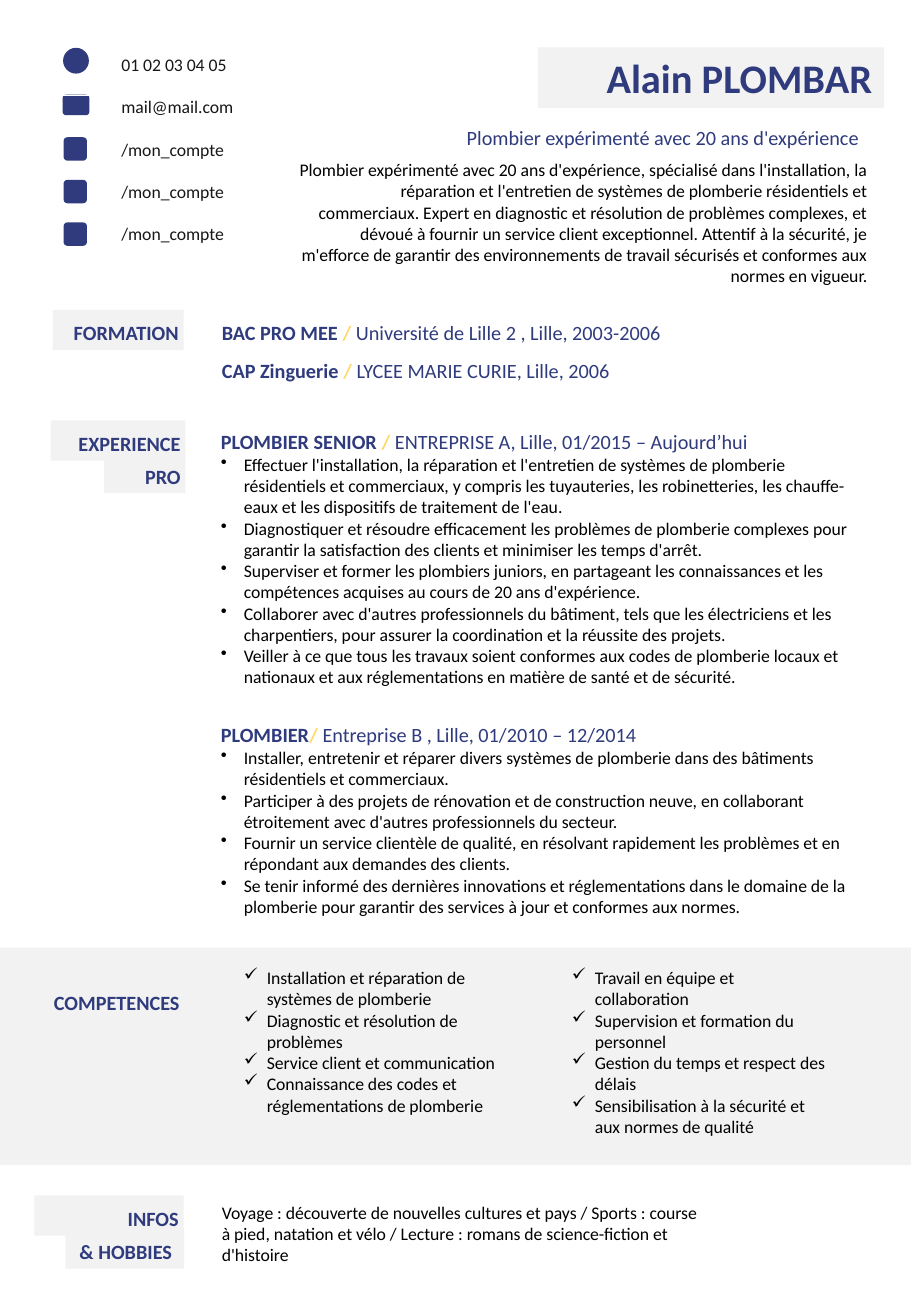
from dataclasses import dataclass

from lxml.etree import SubElement as SubEl
from pptx import Presentation as Deck
from pptx.dml.color import RGBColor as RGB
from pptx.enum.shapes import MSO_SHAPE as Kind
from pptx.enum.text import MSO_ANCHOR as Anchor, PP_ALIGN as Align
from pptx.oxml.ns import qn
from pptx.util import Cm, Pt


@dataclass(frozen=True)
class Theme:
    font: str = "Calibri"
    navy: str = "2F3B7D"
    gold: str = "FFD966"
    grey: str = "F2F2F2"
    white: str = "FFFFFF"
    black: str = "000000"
    ink: str = "181717"
    name: float = 24
    head: float = 12
    body: float = 10.5


def write(par, text, size, color, bold=False, font="Calibri"):
    run = par.add_run()
    run.text = text
    run.font.name = font
    run.font.size = Pt(size)
    run.font.bold = bold
    run.font.color.rgb = RGB.from_string(color)


class Page:
    def __init__(self, slide, theme):
        self.shapes = slide.shapes
        self.look = theme

    def paint(self, shape, color):
        shape.shadow.inherit = False
        shape.fill.solid()
        shape.fill.fore_color.rgb = RGB.from_string(color)
        shape.line.fill.background()

    def block(self, spot, color, kind=Kind.RECTANGLE):
        shape = self.shapes.add_shape(kind, *map(Cm, spot))
        self.paint(shape, color)
        return shape

    def fill(self, frame, rows, align=Align.LEFT, space=1, after=0, mark=None):
        frame.word_wrap = True
        frame.vertical_anchor = Anchor.TOP
        for at, row in enumerate(rows):
            par = frame.add_paragraph() if at else frame.paragraphs[0]
            self.line(par, row, align, space, after, mark)

    def line(self, par, row, align=Align.LEFT, space=1, after=0, mark=None):
        par.alignment = align
        par.line_spacing = space
        par.space_after = Pt(after)
        if mark:
            props = par._p.get_or_add_pPr()
            props.set("marL", str(Cm(0.48)))
            props.set("indent", str(Cm(-0.48)))
            SubEl(props, qn("a:buChar")).set("char", mark)
        for text, style in row:
            write(par, text, font=self.look.font, **style)

    def plain(self, text, size=None, color=None, bold=False):
        size = size or self.look.body
        color = color or self.look.black
        return [(text, dict(size=size, color=color, bold=bold))]

    def text(self, spot, rows, **form):
        box = self.shapes.add_textbox(*map(Cm, spot))
        self.fill(box.text_frame, rows, **form)
        return box.text_frame

    def label(self, spot, text, side=0.1, wrap=True):
        frame = self.block(spot, self.look.grey).text_frame
        frame.margin_left = frame.margin_right = Cm(side)
        row = self.plain(text, self.look.head, self.look.navy, True)
        self.fill(frame, [row], align=Align.RIGHT, space=1.2)
        frame.word_wrap = wrap

    def post(self, spot, title, place, tasks=(), align=Align.LEFT):
        look = self.look
        row = (self.plain(title, look.head, look.navy, True)
               + self.plain("/ ", look.head, look.gold, True)
               + self.plain(place, look.head, look.navy))
        frame = self.text(spot, [row], align=align, space=1.2)
        for task in tasks:
            self.line(frame.add_paragraph(), self.plain(task), mark="•")

    def draw(self, *strokes, close):
        first = strokes[0][0]
        pen = self.shapes.build_freeform(*first, scale=Cm(1))
        for stroke in strokes:
            if stroke[0] != first:
                pen.move_to(*stroke[0])
            pen.add_line_segments(stroke[1:], close=close)
        shape = pen.convert_to_shape()
        self.paint(shape, self.look.white)
        return shape

    def phone(self):
        self.block((1.32, 1, 0.54, 0.54), self.look.navy, Kind.OVAL)
        self.draw([(1.7, 1.42), (1.63, 1.42), (1.5, 1.35), (1.42, 1.17),
                   (1.47, 1.12), (1.5, 1.12), (1.53, 1.19), (1.51, 1.22),
                   (1.56, 1.3), (1.63, 1.35), (1.66, 1.31), (1.73, 1.35),
                   (1.73, 1.4)], close=True)

    def mail(self):
        self.block((1.31, 1.98, 0.56, 0.43), self.look.navy,
                   Kind.ROUNDED_RECTANGLE)
        folds = self.draw([(1.31, 2), (1.59, 2.24), (1.87, 2)],
                          [(1.31, 2.39), (1.51, 2.17)],
                          [(1.87, 2.39), (1.67, 2.17)], close=False)
        folds.fill.background()
        folds.line.color.rgb = RGB.from_string(self.look.white)
        folds.line.width = Pt(0.75)


def main():
    deck = Deck()
    deck.slide_width, deck.slide_height = Cm(19.05), Cm(27.51)
    look = Theme()
    page = Page(deck.slides.add_slide(deck.slide_layouts[6]), look)
    plain = page.plain

    page.block((0, 19.81, 19.05, 4.55), look.grey)

    name = page.block((11.25, 0.99, 7.24, 1.27), look.grey)
    page.fill(name.text_frame, [plain("Alain PLOMBAR", look.name, look.navy, True)],
              align=Align.RIGHT)
    page.text((7.42, 2.39, 10.8, 0.84),
              [plain("Plombier expérimenté avec 20 ans d'expérience", look.head, look.navy)],
              align=Align.RIGHT, space=1.2)
    page.text((5.94, 3.2, 12.45, 2.95), [plain(
        "Plombier expérimenté avec 20 ans d'expérience, spécialisé dans l'installation, la "
        "réparation et l'entretien de systèmes de plomberie résidentiels et commerciaux. "
        "Expert en diagnostic et résolution de problèmes complexes, et dévoué à fournir "
        "un service client exceptionnel. Attentif à la sécurité, je m'efforce de garantir des "
        "environnements de travail sécurisés et conformes aux normes en vigueur.")],
        align=Align.RIGHT)

    page.phone()
    page.mail()
    for at in range(3):
        page.block((1.33, 2.87 + at * 0.89, 0.49, 0.49), look.navy, Kind.ROUNDED_RECTANGLE)
    links = ["01 02 03 04 05", "mail@mail.com"] + ["/mon_compte"] * 3
    page.text((2.29, 0.91, 3.12, 4.34), [plain(link, color=look.ink) for link in links],
              align=Align.JUSTIFY, space=1.2, after=10)

    for spot, text in [
        ((1.1, 6.48, 2.74, 0.84), "FORMATION"),
        ((2.18, 9.47, 1.7, 0.84), "PRO"),
        ((1.06, 8.79, 2.82, 0.84), "EXPERIENCE"),
        ((0.81, 20.47, 3.05, 0.84), "COMPETENCES"),
        ((0.72, 24.99, 3.12, 0.84), "INFOS"),
    ]:
        page.label(spot, text)
    page.label((1.37, 25.68, 2.48, 0.84), "& HOBBIES", side=0.25, wrap=False)

    page.post((4.39, 6.48, 14.02, 0.84), "BAC PRO MEE ",
              "Université de Lille 2 , Lille, 2003-2006", align=Align.JUSTIFY)
    page.post((4.39, 7.27, 14.02, 0.84), "CAP Zinguerie ",
              "LYCEE MARIE CURIE, Lille, 2006", align=Align.JUSTIFY)
    page.post((4.37, 8.75, 14.02, 5.82), "PLOMBIER SENIOR ",
              "ENTREPRISE A, Lille, 01/2015 – Aujourd’hui", [
        "Effectuer l'installation, la réparation et l'entretien de systèmes de plomberie "
        "résidentiels et commerciaux, y compris les tuyauteries, les robinetteries, les "
        "chauffe-eaux et les dispositifs de traitement de l'eau.",
        "Diagnostiquer et résoudre efficacement les problèmes de plomberie complexes pour "
        "garantir la satisfaction des clients et minimiser les temps d'arrêt.",
        "Superviser et former les plombiers juniors, en partageant les connaissances et les "
        "compétences acquises au cours de 20 ans d'expérience.",
        "Collaborer avec d'autres professionnels du bâtiment, tels que les électriciens et les "
        "charpentiers, pour assurer la coordination et la réussite des projets.",
        "Veiller à ce que tous les travaux soient conformes aux codes de plomberie locaux et "
        "nationaux et aux réglementations en matière de santé et de sécurité."])
    page.post((4.37, 14.88, 14.02, 4.9), "PLOMBIER",
              "Entreprise B , Lille, 01/2010 – 12/2014", [
        "Installer, entretenir et réparer divers systèmes de plomberie dans des bâtiments "
        "résidentiels et commerciaux.",
        "Participer à des projets de rénovation et de construction neuve, en collaborant "
        "étroitement avec d'autres professionnels du secteur.",
        "Fournir un service clientèle de qualité, en résolvant rapidement les problèmes et en "
        "répondant aux demandes des clients.",
        "Se tenir informé des dernières innovations et réglementations dans le domaine de la "
        "plomberie pour garantir des services à jour et conformes aux normes."])

    for left, skills in [
        (4.85, ["Installation et réparation de systèmes de plomberie",
                "Diagnostic et résolution de problèmes",
                "Service client et communication",
                "Connaissance des codes et réglementations de plomberie"]),
        (11.71, ["Travail en équipe et collaboration",
                 "Supervision et formation du personnel",
                 "Gestion du temps et respect des délais",
                 "Sensibilisation à la sécurité et aux normes de qualité"]),
    ]:
        page.text((left, 20.09, 5.89, 3.84), map(plain, skills), mark="✓")

    page.text((4.39, 24.99, 10.57, 1.6), [plain(
        "Voyage : découverte de nouvelles cultures et pays / Sports : course à pied, natation "
        "et vélo / Lecture : romans de science-fiction et d'histoire")])
    deck.save("out.pptx")


if __name__ == "__main__":
    main()
